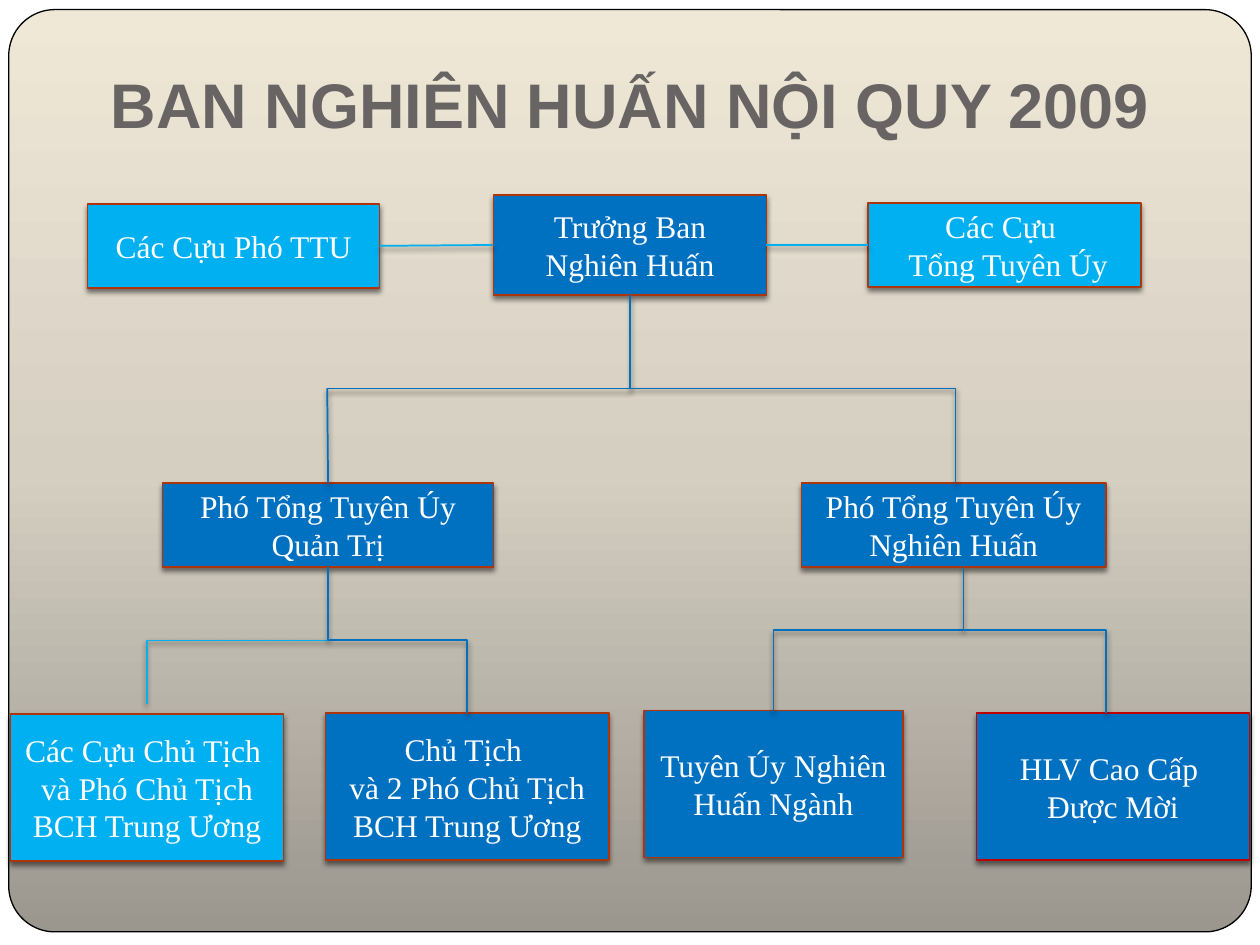
from lxml import etree
from pptx import Presentation
from pptx.dml.color import RGBColor
from pptx.enum.shapes import MSO_CONNECTOR, MSO_SHAPE
from pptx.enum.text import MSO_ANCHOR, PP_ALIGN
from pptx.oxml.ns import qn
from pptx.util import Pt

PROCESS, ROUNDED = MSO_SHAPE.FLOWCHART_PROCESS, MSO_SHAPE.ROUNDED_RECTANGLE
STRAIGHT, ELBOW = MSO_CONNECTOR.STRAIGHT, MSO_CONNECTOR.ELBOW
MIDDLE, BOTTOM = MSO_ANCHOR.MIDDLE, MSO_ANCHOR.BOTTOM
CENTER = PP_ALIGN.CENTER
TOP_SIDE, LEFT_SIDE, RIGHT_SIDE = 0, 1, 3

COLORS = {
    "board": "0070C0", "former": "00B0F0", "border": "AE350A", "guest": "C00000",
    "title": "696464", "text": "FFFFFF", "frame": "000000", "shadow": "000000",
    "sky": "F0E8D7", "haze": "D5CFC2", "ground": "9B968E",
}
TITLE_FONT = {"name": "Arial", "size": Pt(36), "bold": True}
BOX_FONT = {"name": "Times New Roman", "size": Pt(18), "bold": False}


class OrgChart:
    """Draws the parts of an organisation chart on one slide, in points."""

    def __init__(self, slide):
        self.slide = slide
        self.shapes = slide.shapes

    def color(self, key):
        return RGBColor.from_string(COLORS[key])

    def add_color(self, parent, key):
        return etree.SubElement(parent, qn("a:srgbClr"), val=COLORS[key])

    def cast_shadow(self, shape):
        effects = etree.SubElement(shape.element.spPr, qn("a:effectLst"))
        outer = etree.SubElement(
            effects, qn("a:outerShdw"), blurRad=str(Pt(3)), dist=str(Pt(2)),
            dir="5400000", rotWithShape="0")
        etree.SubElement(self.add_color(outer, "shadow"), qn("a:alpha"), val="50000")

    def outline(self, shape, key, width):
        shape.line.color.rgb = self.color(key)
        shape.line.width = Pt(width)

    def label(self, shape, text, font, key, anchor):
        frame = shape.text_frame
        frame.word_wrap = True
        frame.vertical_anchor = anchor
        paragraph = frame.paragraphs[0]
        paragraph.text = text
        paragraph.alignment = CENTER
        for run in paragraph.runs:
            for name, value in font.items():
                setattr(run.font, name, value)
            run.font.color.rgb = self.color(key)

    def backdrop(self, left, top, width, height):
        panel = self.shapes.add_shape(ROUNDED, Pt(left), Pt(top), Pt(width), Pt(height))
        panel.adjustments[0] = 0.05
        panel.shadow.inherit = False
        self.outline(panel, "frame", 0.75)
        panel.fill.gradient()
        panel.fill.gradient_angle = 270
        stops = panel.element.spPr.find(qn("a:gradFill")).find(qn("a:gsLst"))
        for stop in list(stops):
            stops.remove(stop)
        for position, key in ((0, "sky"), (50000, "haze"), (100000, "ground")):
            self.add_color(etree.SubElement(stops, qn("a:gs"), pos=str(position)), key)

    def title(self, text, left, top, width, height):
        heading = self.shapes.add_textbox(Pt(left), Pt(top), Pt(width), Pt(height))
        self.label(heading, text, TITLE_FONT, "title", BOTTOM)
        heading.text_frame.margin_bottom = Pt(7.2)

    def box(self, text, left, top, width, height, fill="board", border="border"):
        member = self.shapes.add_shape(PROCESS, Pt(left), Pt(top), Pt(width), Pt(height))
        member.fill.solid()
        member.fill.fore_color.rgb = self.color(fill)
        self.outline(member, border, 0.75)
        self.cast_shadow(member)
        self.label(member, text, BOX_FONT, "text", MIDDLE)
        return member

    def connector(self, kind, start, end, key):
        link = self.shapes.add_connector(kind, *(Pt(value) for value in (*start, *end)))
        self.outline(link, key, 1)
        self.cast_shadow(link)
        return link

    def corner(self, start, end, key="board"):
        link = self.connector(ELBOW, start, end, key)
        link.element.spPr.find(qn("a:prstGeom")).set("prst", "bentConnector2")
        return link

    def drop_corner(self, start, end, key="board"):
        (x1, y1), (x2, y2) = start, end
        mid_x, mid_y = (x1 + x2) / 2, (y1 + y2) / 2
        half_w, half_h = (y2 - y1) / 2, (x1 - x2) / 2
        link = self.corner((mid_x - half_w, mid_y - half_h),
                           (mid_x + half_w, mid_y + half_h), key)
        link.rotation = 90

    def step(self, start, end, bend, key="board"):
        (x1, y1), (x2, y2) = start, end
        mid_x, mid_y = (x1 + x2) / 2, (y1 + y2) / 2
        half_w, half_h = (y2 - y1) / 2, (x2 - x1) / 2
        link = self.connector(ELBOW, (mid_x + half_w, mid_y - half_h),
                              (mid_x - half_w, mid_y + half_h), key)
        link.rotation = 270
        guides = link.element.spPr.find(qn("a:prstGeom")).get_or_add_avLst()
        etree.SubElement(guides, qn("a:gd"), name="adj1", fmla=f"val {round(bend * 100000)}")


def main():
    deck = Presentation()
    deck.slide_width, deck.slide_height = Pt(720), Pt(540)
    chart = OrgChart(deck.slides.add_slide(deck.slide_layouts[6]))

    chart.backdrop(5, 5.5, 710, 527)
    chart.title("BAN NGHIÊN HUẤN NỘI QUY 2009", 6, 18, 708, 70)

    head = chart.box("Trưởng Ban Nghiên Huấn", 282, 111.5, 156, 57)
    admin = chart.box("Phó Tổng Tuyên Úy\nQuản Trị", 93, 276, 189, 48)
    chart.box("Phó Tổng Tuyên Úy\nNghiên Huấn", 458, 276, 174, 48)
    chart.box("Các Cựu Chủ Tịch \nvà Phó Chủ Tịch\nBCH Trung Ương", 6, 408, 156, 84, "former")
    chart.box("Chủ Tịch \nvà 2 Phó Chủ Tịch\nBCH Trung Ương", 186, 407.5, 162, 84)
    chart.box("Tuyên Úy Nghiên Huấn Ngành", 368, 406, 148, 84)
    chart.box("HLV Cao Cấp \nĐược Mời", 558, 407.5, 156, 84, border="guest")
    chaplains = chart.box("Các Cựu \n Tổng Tuyên Úy", 496, 116, 156, 48, "former")
    deputies = chart.box("Các Cựu Phó TTU", 50, 116.5, 167, 48, "former")

    for side, former, head_side, former_side in (
            ((438, 496), chaplains, RIGHT_SIDE, LEFT_SIDE),
            ((282, 217), deputies, LEFT_SIDE, RIGHT_SIDE)):
        link = chart.connector(STRAIGHT, (side[0], 140), (side[1], 140), "former")
        link.begin_connect(head, head_side)
        link.end_connect(former, former_side)

    chart.drop_corner((360, 168.5), (187, 222))
    stem = chart.connector(STRAIGHT, (187, 222), (187.5, 276), "board")
    stem.end_connect(admin, TOP_SIDE)
    chart.corner((360, 222), (546, 276))
    chart.corner((187.5, 366), (84, 402.5), "former")
    chart.step((187.5, 324), (267, 407.5), 0.5)
    chart.corner((550.5, 360), (442, 406))
    chart.step((550.5, 324), (632, 407.5), 0.43)

    deck.save("out.pptx")


if __name__ == "__main__":
    main()
